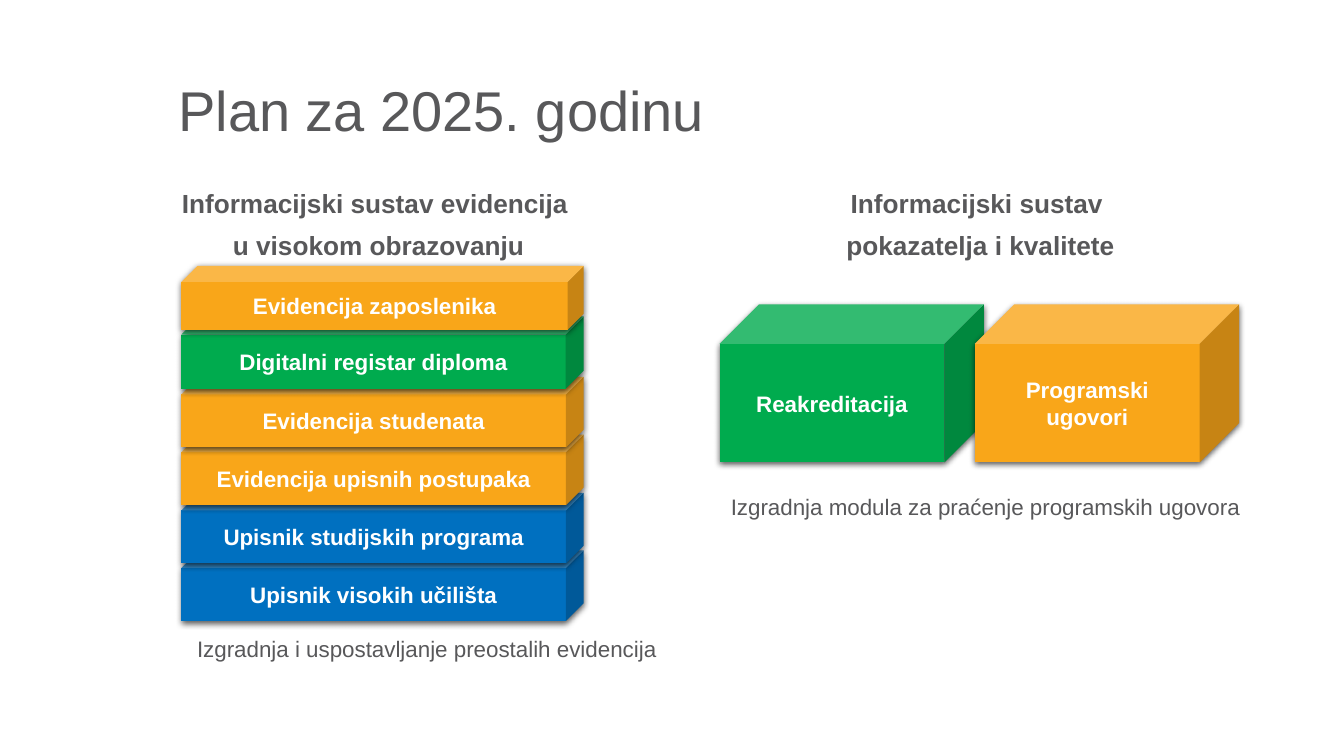
"""Build the slide with the plan for 2025."""
from pptx import Presentation
from pptx.dml.color import RGBColor
from pptx.enum import shapes, text
from pptx.oxml import parse_xml
from pptx.oxml.ns import nsdecls, qn
from pptx.util import Pt

COLOURS = {"grey": "58585A", "white": "FFFFFF", "blue": "0070C0",
           "orange": "F9A619", "green": "00AB4E"}
SHADOW = (
    f'<a:outerShdw {nsdecls("a")} blurRad="{Pt(4.5)}" dist="{Pt(1.5)}" '
    'dir="5400000" rotWithShape="0"><a:srgbClr val="000000">'
    '<a:alpha val="63000"/></a:srgbClr></a:outerShdw>'
)
REGISTERS = [
    ("Upisnik visokih učilišta", "blue", 393.1, 50.4),
    ("Upisnik studijskih programa", "blue", 352, 50.4),
    ("Evidencija upisnih postupaka", "orange", 310.4, 50.4),
    ("Evidencija studenata", "orange", 269.2, 50.4),
    ("Digitalni registar diploma", "green", 226, 51.8),
    ("Evidencija zaposlenika", "orange", 190, 45.4),
]
MODULES = [("Reakreditacija", "green"), ("Programski ugovori", "orange")]


class PlanSlide:
    """Hold the font and the current page, and add its elements."""

    def __init__(self, deck, font="Arial"):
        self.font = font
        self.page = deck.slides.add_slide(deck.slide_layouts[5])

    def set_text(self, shape, wording, size, colour="grey", bold=False,
                 align=text.PP_ALIGN.CENTER, anchor=text.MSO_ANCHOR.TOP,
                 spacing=1.0, gap=0):
        frame = shape.text_frame
        frame.text = wording
        frame.word_wrap = True
        frame.auto_size = text.MSO_AUTO_SIZE.NONE
        frame.vertical_anchor = anchor
        for index, para in enumerate(frame.paragraphs):
            para.alignment = align
            para.line_spacing = spacing
            para.space_before = Pt(gap if index else 0)
            for span in para.runs:
                span.font.name = self.font
                span.font.size = Pt(size)
                span.font.bold = bold
                span.font.color.rgb = RGBColor.from_string(COLOURS[colour])

    def title(self, wording, left, top, width, height):
        box = self.page.shapes.title
        box.left, box.top = Pt(left), Pt(top)
        box.width, box.height = Pt(width), Pt(height)
        self.set_text(box, wording, 40, align=text.PP_ALIGN.LEFT,
                      anchor=text.MSO_ANCHOR.MIDDLE, spacing=0.9)

    def textbox(self, left, top, width, height):
        return self.page.shapes.add_textbox(Pt(left), Pt(top), Pt(width), Pt(height))

    def heading(self, wording, left, top, width, height):
        box = self.textbox(left, top, width, height)
        self.set_text(box, wording, 18.7, bold=True, spacing=0.9, gap=10)

    def caption(self, wording, left, top, width, height):
        box = self.textbox(left, top, width, height)
        frame = box.text_frame
        frame.margin_top = frame.margin_bottom = Pt(5)
        self.set_text(box, wording, 16)

    def cube(self, wording, colour, left, top, width, height):
        block = self.page.shapes.add_shape(
            shapes.MSO_SHAPE.CUBE, Pt(left), Pt(top), Pt(width), Pt(height))
        block.fill.solid()
        block.fill.fore_color.rgb = RGBColor.from_string(COLOURS[colour])
        block.line.fill.background()
        block.shadow.inherit = False
        block._element.spPr.find(qn("a:effectLst")).append(parse_xml(SHADOW))
        self.set_text(block, wording, 16, "white", bold=True,
                      anchor=text.MSO_ANCHOR.MIDDLE)


def main():
    deck = Presentation()
    deck.slide_width, deck.slide_height = Pt(960), Pt(540)
    plan = PlanSlide(deck)
    plan.title("Plan za 2025. godinu", 120.2, 28.8, 774, 104.4)
    plan.heading("Informacijski sustav evidencija \nu visokom obrazovanju",
                 118.8, 132.5, 303.1, 64.8)
    plan.heading("Informacijski sustav \npokazatelja i kvalitete",
                 506.2, 132.5, 388.1, 64.8)
    for wording, colour, top, height in REGISTERS:
        plan.cube(wording, colour, 129.6, top, 287.3, height)
    for index, (wording, colour) in enumerate(MODULES):
        plan.cube(wording, colour, 514 + index * 182.4, 217.4, 188.8, 113)
    plan.caption("Izgradnja i uspostavljanje preostalih evidencija",
                 129.6, 448.6, 350.6, 31.7)
    plan.caption("Izgradnja modula za praćenje programskih ugovora",
                 506.2, 347, 395.3, 30.2)
    deck.save("out.pptx")


if __name__ == "__main__":
    main()
